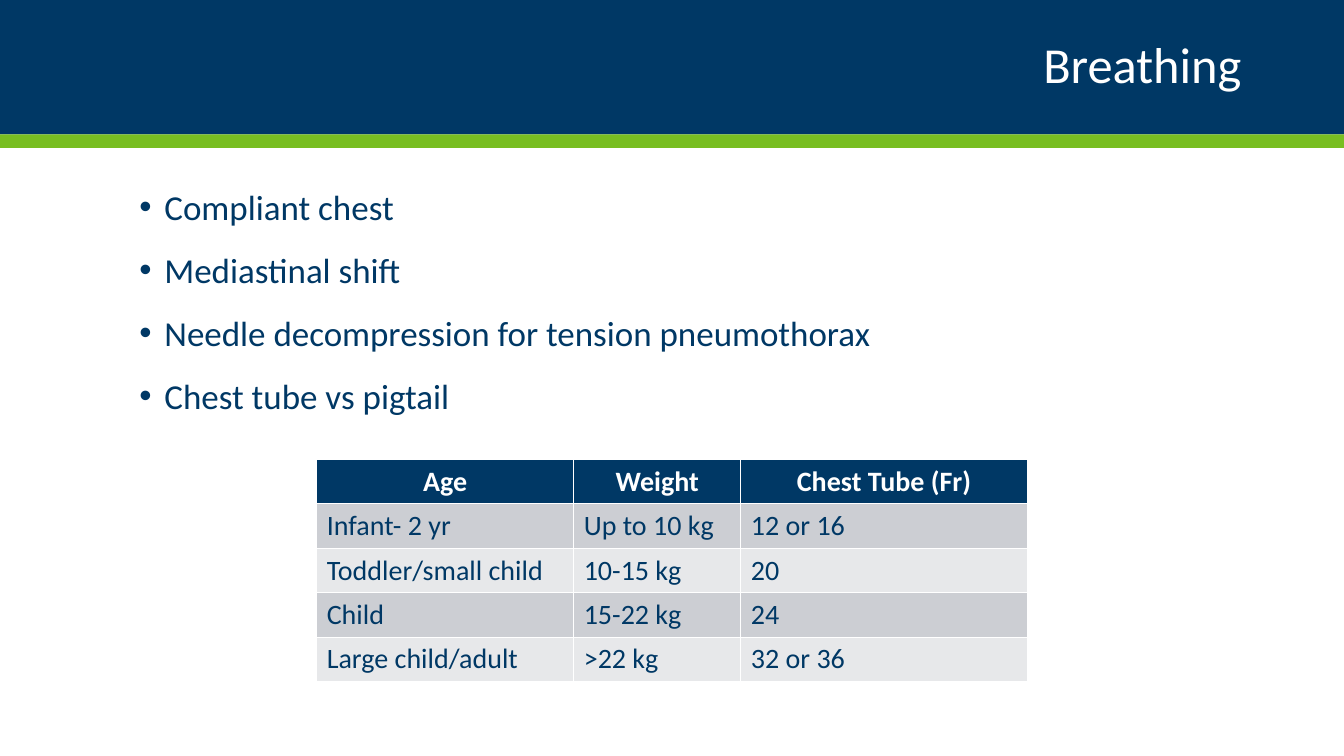
from dataclasses import dataclass

from lxml import etree
from pptx import Presentation
from pptx.dml.color import RGBColor
from pptx.enum.shapes import MSO_SHAPE
from pptx.enum.text import MSO_ANCHOR, MSO_AUTO_SIZE, PP_ALIGN
from pptx.oxml.ns import qn
from pptx.util import Inches, Pt

RECTANGLE = MSO_SHAPE.RECTANGLE
MIDDLE = MSO_ANCHOR.MIDDLE
TOP = MSO_ANCHOR.TOP
LEFT, CENTER, RIGHT = PP_ALIGN.LEFT, PP_ALIGN.CENTER, PP_ALIGN.RIGHT
NO_AUTOFIT = MSO_AUTO_SIZE.NONE
TITLE_ONLY = 5
GRID_COLUMNS, GRID_ROWS = 160, 90


@dataclass(frozen=True)
class Theme:
    font: str = "Calibri"
    navy: str = "003865"
    green: str = "78BE21"
    white: str = "FFFFFF"
    stripes: tuple = ("CCCED3", "E7E8EA")
    title_size: int = 36
    body_size: int = 25
    table_size: int = 20


def apply_format(target, values):
    for attribute, value in values.items():
        setattr(target, attribute, value)


def fill_solid(item, color):
    item.fill.solid()
    item.fill.fore_color.rgb = RGBColor.from_string(color)


class SlideBuilder:
    def __init__(self, presentation, theme):
        self.theme = theme
        self.slide = presentation.slides.add_slide(presentation.slide_layouts[TITLE_ONLY])
        self.column = presentation.slide_width / GRID_COLUMNS
        self.row = presentation.slide_height / GRID_ROWS

    def place(self, column, row, columns, rows):
        return (round(column * self.column), round(row * self.row),
                round(columns * self.column), round(rows * self.row))

    def add_words(self, paragraph, text, size, color, bold=False, **layout):
        run = paragraph.add_run()
        run.text = text
        apply_format(run.font, {"name": self.theme.font, "size": Pt(size), "bold": bold})
        run.font.color.rgb = RGBColor.from_string(color)
        apply_format(paragraph, layout)

    def band(self, row, rows, color):
        area = self.place(0, row, GRID_COLUMNS, rows)
        band = self.slide.shapes.add_shape(RECTANGLE, *area)
        band.shadow.inherit = False
        fill_solid(band, color)
        band.line.fill.background()

    def title(self, text, *cells):
        heading = self.slide.shapes.title
        self.slide.shapes._spTree.append(heading._element)
        apply_format(heading, dict(zip(("left", "top", "width", "height"), self.place(*cells))))
        apply_format(heading.text_frame, {"vertical_anchor": MIDDLE, "auto_size": NO_AUTOFIT})
        self.add_words(heading.text_frame.paragraphs[0], text, self.theme.title_size,
                       self.theme.white, alignment=RIGHT, line_spacing=0.9)

    def bullets(self, points, *cells):
        body = self.slide.shapes.add_textbox(*self.place(*cells))
        fill_solid(body, self.theme.white)
        frame = body.text_frame
        apply_format(frame, {"word_wrap": True, "auto_size": NO_AUTOFIT, "vertical_anchor": TOP})
        for index, point in enumerate(points):
            paragraph = frame.add_paragraph() if index else frame.paragraphs[0]
            self.add_words(paragraph, point, self.theme.body_size, self.theme.navy,
                           alignment=LEFT, space_before=Pt(5), space_after=Pt(10))
            properties = paragraph._p.get_or_add_pPr()
            properties.set("marL", str(Inches(0.75)))
            properties.set("indent", str(Inches(-0.25)))
            bullet_color = etree.SubElement(properties, qn("a:buClr"))
            etree.SubElement(bullet_color, qn("a:srgbClr"), val=self.theme.navy)
            etree.SubElement(properties, qn("a:buFont"), typeface="Arial")
            etree.SubElement(properties, qn("a:buChar"), char="•")

    def table(self, records, column, row, widths, row_height):
        area = self.place(column, row, sum(widths), row_height * len(records))
        table = self.slide.shapes.add_table(len(records), len(widths), *area).table
        for table_column, width in zip(table.columns, widths):
            table_column.width = round(width * self.column)
        for row_index, record in enumerate(records):
            is_header = row_index == 0
            fill = self.theme.navy if is_header else self.theme.stripes[(row_index - 1) % 2]
            color = self.theme.white if is_header else self.theme.navy
            for column_index, text in enumerate(record):
                cell = table.cell(row_index, column_index)
                fill_solid(cell, fill)
                self.add_words(cell.text_frame.paragraphs[0], text, self.theme.table_size, color,
                               bold=is_header, alignment=CENTER if is_header else LEFT)


def main():
    presentation = Presentation()
    apply_format(presentation, {"slide_width": Inches(13.33), "slide_height": Inches(7.5)})
    theme = Theme()
    breathing = SlideBuilder(presentation, theme)
    breathing.band(0, 16, theme.navy)
    breathing.band(16, 1.6, theme.green)
    breathing.title("Breathing", 11, 2, 138, 12)
    breathing.bullets([
        "Compliant chest",
        "Mediastinal shift",
        "Needle decompression for tension pneumothorax",
        "Chest tube vs pigtail",
    ], 9.4, 21.5, 119, 33.2)
    breathing.table([
        ("Age", "Weight", "Chest Tube (Fr)"),
        ("Infant- 2 yr", "Up to 10 kg", "12 or 16"),
        ("Toddler/small child", "10-15 kg", "20"),
        ("Child", "15-22 kg", "24"),
        ("Large child/adult", ">22 kg", "32 or 36"),
    ], 37.7, 54.7, (30.6, 19.9, 34.1), 5.28)
    presentation.save("out.pptx")


if __name__ == "__main__":
    main()
